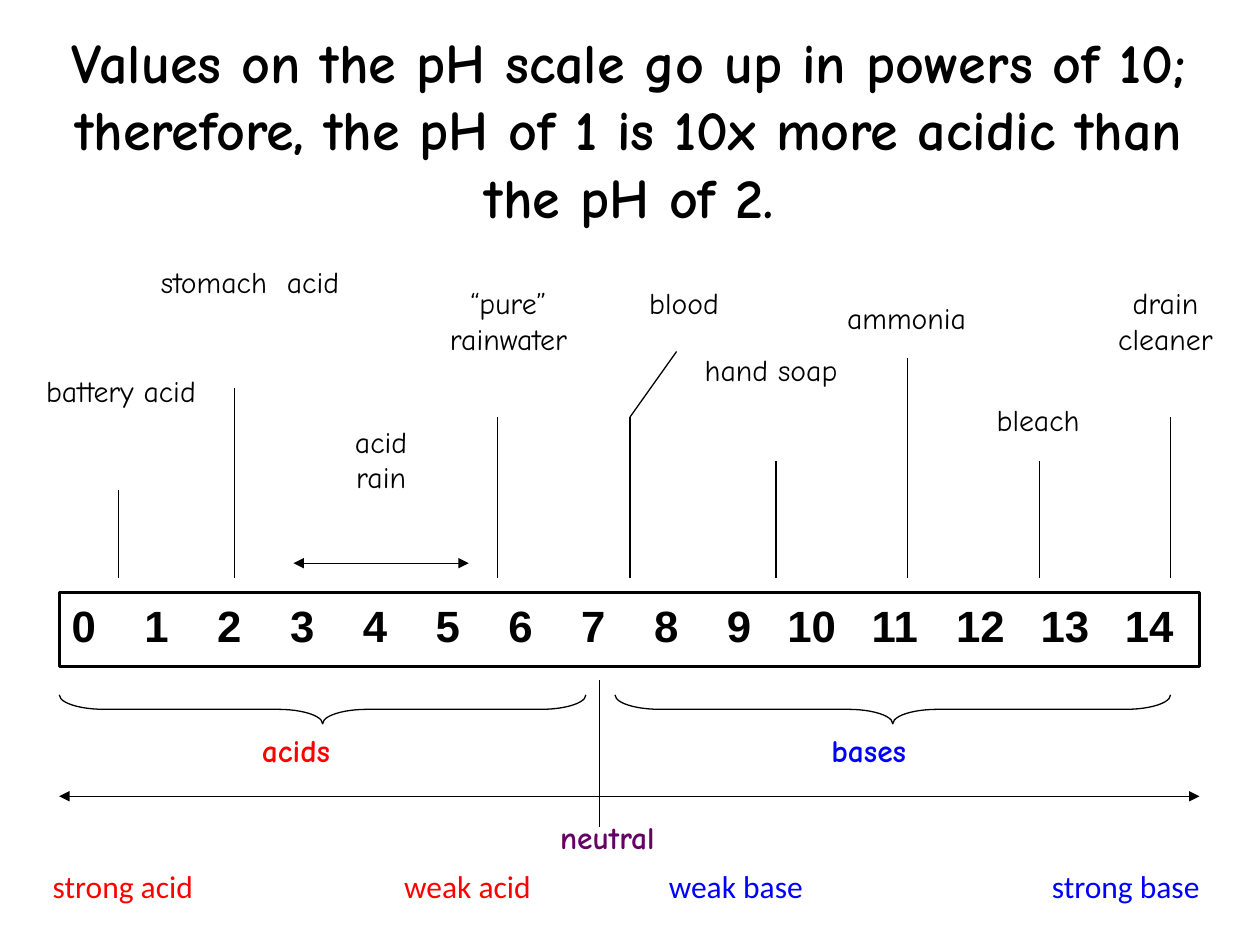
import pptx
import pptx.util
import pptx.dml.color
import pptx.enum.shapes
import pptx.enum.text
import pptx.oxml
import pptx.oxml.ns

Inches, Pt = pptx.util.Inches, pptx.util.Pt
Shape = pptx.enum.shapes.MSO_SHAPE
Align = pptx.enum.text.PP_ALIGN

# Content
INK = {"black": "000000", "red": "FF0000", "blue": "0000FF", "purple": "660066"}
HAND, PLAIN, BOLD = "Comic Neue", "Calibri", "Arial"
TITLE = ("Values on the pH scale go up in powers of 10; therefore, "
         "the pH of 1 is 10x more acidic than the pH of 2.")

# Substance: text, left, top, width, height
ITEMS = [
    ("stomach  acid", 1.23, 2.09, 1.51, 1.04),
    ("“pure” rainwater", 3.28, 2.26, 1.51, 0.87),
    ("blood", 4.85, 2.26, 1.16, 0.39),
    ("hand soap", 5.54, 2.79, 1.16, 0.87),
    ("bleach", 7.66, 3.19, 1.16, 0.39),
    ("drain cleaner", 8.67, 2.26, 1.16, 1.04),
    ("ammonia", 6.5, 2.38, 1.39, 0.39),
    ("battery acid", 0.32, 2.96, 1.28, 0.93),
]
# Marker: x and top; all stand just above the scale
MARKS = [(0.94, 3.89), (1.86, 3.08), (3.95, 3.31), (5, 3.31),
         (6.16, 3.66), (7.2, 2.84), (8.25, 3.66), (9.29, 3.31)]
FOOT = 4.59
# Brace: left, width
BRACES = [(0.47, 4.18), (4.88, 4.41)]
SIDES = [("acids", 1.98, 1.16, "red"), ("bases", 6.5, 1.39, "blue")]
ENDS = [("strong acid", 0.32, "red"), ("weak acid", 3.11, "red"),
        ("weak base", 5.21, "blue"), ("strong base", 8.25, "blue")]

deck = pptx.Presentation()
deck.slide_width, deck.slide_height = Inches(10), Inches(7.5)
slide = deck.slides.add_slide(deck.slide_layouts[6])
shapes = slide.shapes


def color(name):
    return pptx.dml.color.RGBColor.from_string(INK[name])


def node(tag, attrs="", inner=""):
    space = pptx.oxml.ns.nsdecls("a")
    return pptx.oxml.parse_xml(f"<{tag} {space} {attrs}>{inner}</{tag}>")


def write(text, box, size=17, font=HAND, ink="black", bold=False,
          align=Align.CENTER, pad=(0.1, 0.05, 0.1, 0.05), host=None):
    host = host or shapes.add_textbox(*map(Inches, box))
    frame = host.text_frame
    frame.word_wrap = True
    frame.vertical_anchor = pptx.enum.text.MSO_ANCHOR.TOP
    (frame.margin_left, frame.margin_top,
     frame.margin_right, frame.margin_bottom) = map(Inches, pad)
    para = frame.paragraphs[0]
    para.alignment = align
    run = para.add_run()
    run.text = text
    run.font.size, run.font.name, run.font.bold = Pt(size), font, bold
    run.font.color.rgb = color(ink)
    return para


def draw(kind, box, width):
    shape = shapes.add_shape(kind, *map(Inches, box))
    shape.shadow.inherit = False
    shape.fill.background()
    shape.line.color.rgb = color("black")
    shape.line.width = Pt(width)
    return shape


def join(x1, y1, x2, y2, arrows=False):
    line = shapes.add_connector(pptx.enum.shapes.MSO_CONNECTOR.STRAIGHT,
                                *map(Inches, (x1, y1, x2, y2)))
    line.line.color.rgb = color("black")
    line.line.width = Pt(0.75)
    props = line.element.spPr
    if arrows:
        stroke = props.find(pptx.oxml.ns.qn("a:ln"))
        for tag in ("a:headEnd", "a:tailEnd"):
            stroke.append(node(tag, 'type="triangle"'))
    props.append(node("a:effectLst"))


# Scale: numbers sit on tab stops, two-digit ones further apart
bar = (0.47, 4.7, 9.05, 0.59)
para = write("\t".join(str(n) for n in range(15)), bar, size=25, font=BOLD,
             bold=True, align=Align.LEFT, pad=(0.1, 0.05, 0, 0.05),
             host=draw(Shape.RECTANGLE, bar, 1.5))
stops = [5.2 * n / 9 if n < 10 else 5.68 + 0.67 * (n - 10)
         for n in range(1, 15)]
tabs = "".join(f'<a:tab pos="{Inches(x)}" algn="l"/>' for x in stops)
para._p.get_or_add_pPr().append(node("a:tabLst", inner=tabs))

# Braces: upright shapes turned a quarter about their centre
THICK, MID = 0.23, 5.63
for left, span in BRACES:
    brace = draw(Shape.RIGHT_BRACE, (left + (span - THICK) / 2, MID - span / 2,
                                     THICK, span), 0.75)
    brace.rotation = 90
    brace.adjustments[0] = 1.55

# Neutral line and strength arrow
join(4.76, 5.4, 4.76, 6.56)
join(0.47, 6.32, 9.52, 6.32, arrows=True)
write("neutral", (3.6, 6.44, 2.44, 0.56), size=18, ink="purple", bold=True)
for text, left, width, ink in SIDES:
    write(text, (left, 5.75, width, 0.56), size=18, ink=ink, bold=True,
          align=Align.LEFT)

# Substances and their markers
for x, top in MARKS:
    join(x, FOOT, x, top)
join(5, 3.31, 5.37, 2.79)
join(2.33, 4.47, 3.72, 4.47, arrows=True)
write("acid rain", (2.56, 3.31, 0.93, 1.05))
for text, *box in ITEMS:
    write(text, box, pad=(0, 0, 0, 0))

# Title and strength labels
write(TITLE, (0.47, 0.17, 9.05, 1.72), size=32, bold=True,
      pad=(0.05, 0.05, 0.05, 0.05))
for text, left, ink in ENDS:
    write(text, (left, 6.83, 1.54, 0.4), size=18, font=PLAIN, ink=ink,
          align=Align.LEFT)

deck.save("out.pptx")
